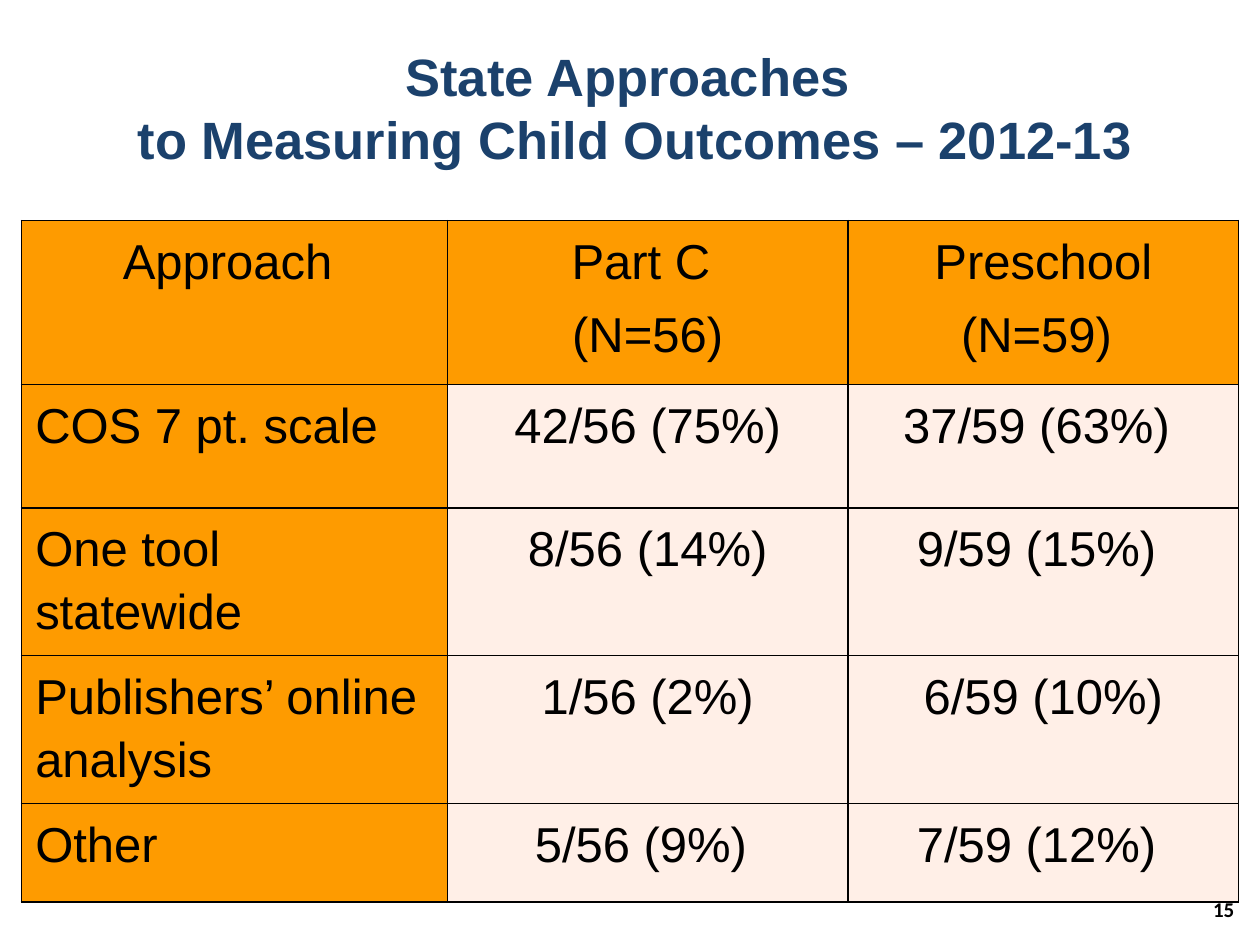
from dataclasses import dataclass

from lxml import etree
from pptx import Presentation
from pptx.dml.color import RGBColor
from pptx.enum.text import PP_ALIGN
from pptx.oxml.ns import qn
from pptx.util import Inches, Pt

LEFT, CENTER = PP_ALIGN.LEFT, PP_ALIGN.CENTER

COLORS = {
    "title": "1B416C",
    "text": "000000",
    "border": "000000",
    "heading": "FE9B00",
    "value": "FFEFE7",
}

COLUMN_WIDTHS = [3.38, 3.18, 3.1]


@dataclass
class Label:
    text: str
    left: float
    top: float
    width: float
    height: float
    size: float
    font: str
    color: str
    align: PP_ALIGN
    margin_top: float = 0.05


@dataclass
class Row:
    height: float
    cells: list[str]


LABELS = [
    Label("State Approaches \vto Measuring Child Outcomes – 2012-13",
          0.25, 0.25, 9.58, 1.25, 30, "Arial", "title", CENTER, 0.1),
    Label("15", 9.53, 7.07, 0.5, 0.4, 12, "Calibri", "text", LEFT),
]

ROWS = [
    Row(1.3, ["Approach ", "Part C \n(N=56)", "Preschool\n(N=59) "]),
    Row(0.98, ["COS 7 pt. scale", "42/56 (75%)", "37/59 (63%) "]),
    Row(0.98, ["One tool statewide", "8/56 (14%)", "9/59 (15%) "]),
    Row(0.98, ["Publishers’ online analysis", "1/56 (2%)", "6/59 (10%)"]),
    Row(0.78, ["Other", "5/56 (9%) ", "7/59 (12%) "]),
]


def style_font(font, name: str, size: float, color: str, bold: bool) -> None:
    font.name = name
    font.size = Pt(size)
    font.bold = bold
    font.color.rgb = RGBColor.from_string(COLORS[color])


def add_label(slide, label: Label) -> None:
    sp = slide.shapes.add_textbox(Inches(label.left), Inches(label.top),
                                  Inches(label.width), Inches(label.height))
    tf = sp.text_frame
    tf.word_wrap = True
    tf.margin_top = Inches(label.margin_top)
    tf.text = label.text
    p = tf.paragraphs[0]
    p.alignment = label.align
    style_font(p.font, label.font, label.size, label.color, True)


def add_borders(cell) -> None:
    tc_pr = cell._tc.get_or_add_tcPr()
    for i, side in enumerate(("lnL", "lnR", "lnT", "lnB")):
        ln = etree.Element(qn(f"a:{side}"), w=str(Pt(1)))
        fill = etree.SubElement(ln, qn("a:solidFill"))
        etree.SubElement(fill, qn("a:srgbClr"), val=COLORS["border"])
        tc_pr.insert(i, ln)


def fill_cell(cell, text: str, fill: str, align: PP_ALIGN) -> None:
    cell.margin_left = cell.margin_right = Inches(0.11)
    cell.margin_top = cell.margin_bottom = Inches(0.05)
    cell.fill.solid()
    cell.fill.fore_color.rgb = RGBColor.from_string(COLORS[fill])
    add_borders(cell)
    cell.text = text
    for i, p in enumerate(cell.text_frame.paragraphs):
        p.alignment = align
        p.line_spacing = 1.15
        p.space_before = Pt(5.8 if i else 0)
        style_font(p.font, "Arial", 28, "text", False)


def add_outcomes_table(slide, rows: list[Row]) -> None:
    table = slide.shapes.add_table(
        len(rows), len(COLUMN_WIDTHS), Inches(0.17), Inches(1.75),
        Inches(sum(COLUMN_WIDTHS)), Inches(sum(row.height for row in rows))).table
    table.first_row = False
    table.horz_banding = False
    for column, width in zip(table.columns, COLUMN_WIDTHS):
        column.width = Inches(width)
    for r, row in enumerate(rows):
        table.rows[r].height = Inches(row.height)
        for c, text in enumerate(row.cells):
            fill = "heading" if r == 0 or c == 0 else "value"
            align = LEFT if r > 0 and c == 0 else CENTER
            fill_cell(table.cell(r, c), text, fill, align)


def main() -> None:
    prs = Presentation()
    prs.slide_width, prs.slide_height = Inches(10), Inches(7.5)
    s = prs.slides.add_slide(prs.slide_layouts[6])
    for label in LABELS:
        add_label(s, label)
    add_outcomes_table(s, ROWS)
    prs.save("out.pptx")


if __name__ == "__main__":
    main()
